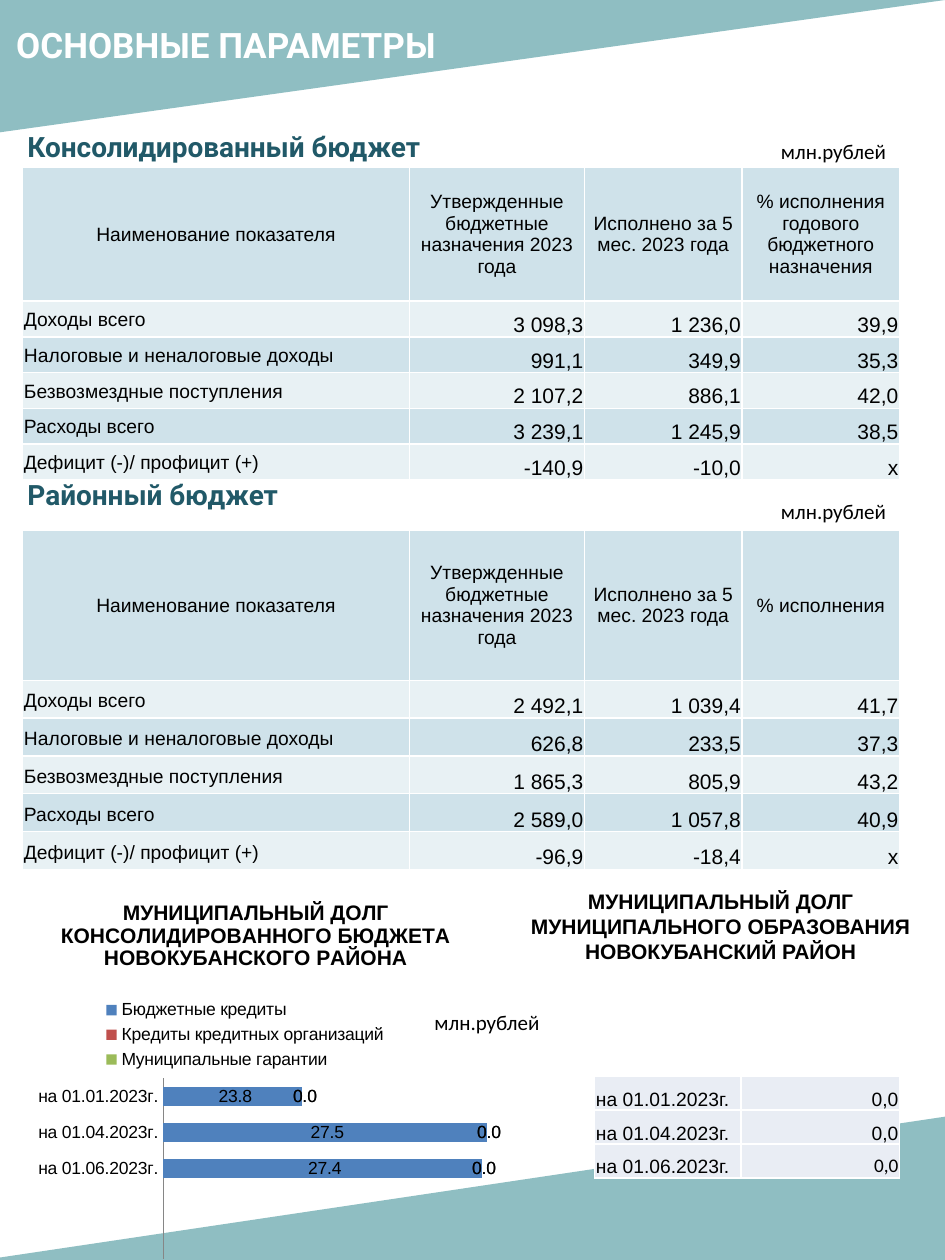
import pptx
import pptx.chart.data
import pptx.dml.color
import pptx.enum.chart
import pptx.enum.shapes
import pptx.enum.text
import pptx.oxml
import pptx.oxml.ns
import pptx.util
from lxml import etree

Inches, Pt = pptx.util.Inches, pptx.util.Pt
RGB = pptx.dml.color.RGBColor
ALIGN, ANCHOR = pptx.enum.text.PP_ALIGN, pptx.enum.text.MSO_ANCHOR
qn = pptx.oxml.ns.qn

TEAL, DARK = RGB(0x51, 0x9A, 0xA0), RGB(0x21, 0x59, 0x68)
WHITE, BLACK, GRAY = RGB(255, 255, 255), RGB(0, 0, 0), RGB(0x86, 0x86, 0x86)
BAND, PALE, ICE = RGB(0xCF, 0xE2, 0xEA), RGB(0xE8, 0xF1, 0xF4), RGB(0xE9, 0xED, 0xF4)
BLUE, RED, GREEN = RGB(0x4F, 0x81, 0xBD), RGB(0xC0, 0x50, 0x4D), RGB(0x9B, 0xBB, 0x59)

# left, top, width, height, flip
WEDGES = [(0, 0, 7.5, 1.05, "flipH"), (-0.13, 8.86, 7.65, 1.14, "flipV")]
# text, left, top, width, height, size, font, colour
HEADS = [
    ("ОСНОВНЫЕ ПАРАМЕТРЫ", 0.03, 0.14, 4.87, 0.43, 20, "Roboto", WHITE),
    ("Консолидированный бюджет", 0.12, 0.98, 4.87, 0.36, 16, "Roboto", DARK),
    ("Районный бюджет", 0.12, 3.74, 4.87, 0.36, 16, "Roboto", DARK),
]
UNIT = "млн.рублей"
UNITS = [(6.1, 1.05), (6.1, 3.91), (3.35, 7.96)]
COLS = ["Наименование показателя", "Утвержденные бюджетные назначения 2023 года",
        "Исполнено за 5 мес. 2023 года"]
NAMES = ["Доходы всего", "Налоговые и неналоговые доходы", "Безвозмездные поступления",
         "Расходы всего", "Дефицит (-)/ профицит (+)"]
WIDTHS = [3.07, 1.39, 1.25, 1.25]
# top, header height, row height, last heading, values
BUDGETS = [
    (1.33, 1.06, 0.28, "% исполнения годового бюджетного назначения", [
        ("3 098,3", "1 236,0", "39,9"), ("991,1", "349,9", "35,3"),
        ("2 107,2", "886,1", "42,0"), ("3 239,1", "1 245,9", "38,5"),
        ("-140,9", "-10,0", " х")]),
    (4.21, 1.19, 0.3, "% исполнения", [
        ("2 492,1", "1 039,4", "41,7"), ("626,8", "233,5", "37,3"),
        ("1 865,3", "805,9", "43,2"), ("2 589,0", "1 057,8", "40,9"),
        ("-96,9", "-18,4", " х")]),
]
DATES = ["на 01.01.2023г.", "на 01.04.2023г.", "на 01.06.2023г."]
DEBT = "МУНИЦИПАЛЬНЫЙ ДОЛГ МУНИЦИПАЛЬНОГО ОБРАЗОВАНИЯ НОВОКУБАНСКИЙ РАЙОН"
TITLE = "МУНИЦИПАЛЬНЫЙ ДОЛГ КОНСОЛИДИРОВАННОГО БЮДЖЕТА НОВОКУБАНСКОГО РАЙОНА"
SERIES = [
    ("Бюджетные кредиты", [23.8, 27.5, 27.4], BLUE),
    ("Кредиты кредитных организаций", [0, 0, 0], RED),
    ("Муниципальные гарантии", [0, 0, 0], GREEN),
]
SPARE = 2  # empty slots below the dates
FORMAT = r"#\ ##0.0"


def style(font, size, name="Arial", color=BLACK, bold=False):
    font.size, font.name, font.bold = Pt(size), name, bold
    font.color.rgb = color


def label(slide, text, box, size, name, color=BLACK, bold=False, align=ALIGN.LEFT):
    frame = slide.shapes.add_textbox(*map(Inches, box)).text_frame
    frame.word_wrap = True
    frame.auto_size = pptx.enum.text.MSO_AUTO_SIZE.SHAPE_TO_FIT_TEXT
    par = frame.paragraphs[0]
    par.text, par.alignment = text, align
    style(par.font, size, name, color, bold)


def wedge(slide, box, flip):
    shape = slide.shapes.add_shape(
        pptx.enum.shapes.MSO_SHAPE.RIGHT_TRIANGLE, *map(Inches, box))
    shape.shadow.inherit = False
    shape.rotation = 180
    shape._element.spPr.find(qn("a:xfrm")).set(flip, "1")
    shape.line.fill.background()
    shape.fill.solid()
    shape.fill.fore_color.rgb = TEAL
    tint = shape._element.spPr.find(qn("a:solidFill"))[0]
    etree.SubElement(tint, qn("a:alpha")).set("val", "64000")


def put(cell, text, fill, size, align, anchor=ANCHOR.BOTTOM, pad=(0.01, 0), name="Arial"):
    """Fill one cell and draw its white borders; pad is top and bottom."""
    cell.margin_left = cell.margin_right = Inches(0.01)
    cell.margin_top, cell.margin_bottom = map(Inches, pad)
    cell.vertical_anchor = anchor
    par = cell.text_frame.paragraphs[0]
    par.text, par.alignment = text, align
    style(par.font, size, name)
    props = cell._tc.get_or_add_tcPr()
    for side in ("lnL", "lnR", "lnT", "lnB"):
        line = etree.SubElement(props, qn("a:" + side), w=str(Pt(1)))
        paint = etree.SubElement(line, qn("a:solidFill"))
        etree.SubElement(paint, qn("a:srgbClr"), val=str(WHITE))
    cell.fill.solid()
    cell.fill.fore_color.rgb = fill


def grid(slide, left, top, widths, heights):
    table = slide.shapes.add_table(
        len(heights), len(widths), Inches(left), Inches(top),
        Inches(sum(widths)), Inches(sum(heights))).table
    for col, width in zip(table.columns, widths):
        col.width = Inches(width)
    for row, height in zip(table.rows, heights):
        row.height = Inches(height)
    return table


def budget(slide, top, head, step, last, values):
    table = grid(slide, 0.18, top, WIDTHS, [head] + [step] * len(NAMES))
    wide = (0.05, 0.05)
    for c, text in enumerate(COLS + [last]):
        put(table.cell(0, c), text, BAND, 11, ALIGN.CENTER, ANCHOR.MIDDLE, wide)
    for r, (name, nums) in enumerate(zip(NAMES, values), 1):
        fill = PALE if r % 2 else BAND
        put(table.cell(r, 0), name, fill, 11, ALIGN.LEFT, pad=wide)
        for c, num in enumerate(nums, 1):
            put(table.cell(r, c), num, fill, 12, ALIGN.RIGHT)


def place(node, x, y, w, h, inner=False):
    """Give a plot area or legend a fixed layout, as fractions of the chart."""
    for old in node.findall(qn("c:layout")):
        node.remove(old)
    layout = etree.Element(qn("c:layout"))
    manual = etree.SubElement(layout, qn("c:manualLayout"))
    parts = [("layoutTarget", "inner")] if inner else []
    parts += [("xMode", "edge"), ("yMode", "edge"), ("x", x), ("y", y), ("w", w), ("h", h)]
    for tag, val in parts:
        etree.SubElement(manual, qn("c:" + tag), val=str(val))
    node.insert(0 if inner else 1, layout)


def bars(slide):
    data = pptx.chart.data.CategoryChartData(number_format=FORMAT)
    data.categories = DATES + [""] * SPARE
    for name, vals, _ in SERIES:
        data.add_series(name, vals + [None] * SPARE)
    chart = slide.shapes.add_chart(
        pptx.enum.chart.XL_CHART_TYPE.BAR_STACKED,
        *map(Inches, (-0.13, 7, 4.32, 3)), data).chart
    style(chart.font, 10)
    chart.has_title = True
    par = chart.chart_title.text_frame.paragraphs[0]
    par.text = TITLE
    style(par.font, 12, bold=True)
    chart.has_legend = True
    chart.legend.position = pptx.enum.chart.XL_LEGEND_POSITION.TOP
    chart.legend.include_in_layout = False
    place(chart.legend._element, 0.2, 0.3, 0.56, 0.21)
    place(chart._chartSpace.chart.plotArea, 0.33, 0.52, 0.64, 0.48, inner=True)

    plot = chart.plots[0]
    plot.gap_width, plot.overlap, plot.vary_by_categories = 95, 100, False
    for ser, (_, _, color) in zip(plot.series, SERIES):
        ser.format.fill.solid()
        ser.format.fill.fore_color.rgb = color
        tags = ser.data_labels
        tags.show_value = True
        tags.number_format, tags.number_format_is_linked = FORMAT, False

    cat, val = chart.category_axis, chart.value_axis
    cat.reverse_order = True
    cat.major_tick_mark = pptx.enum.chart.XL_TICK_MARK.NONE
    cat.format.line.color.rgb = GRAY
    val.visible = val.has_major_gridlines = False
    val.minimum_scale, val.maximum_scale = 21, 28


def main():
    deck = pptx.Presentation()
    deck.slide_width, deck.slide_height = Inches(7.5), Inches(10)
    slide = deck.slides.add_slide(deck.slide_layouts[6])
    for *box, flip in WEDGES:
        wedge(slide, box, flip)
    for text, *box, size, name, color in HEADS:
        label(slide, text, box, size, name, color, bold=True)
    for left, top in UNITS:
        label(slide, UNIT, (left, top, 1.1, 0.3), 12, "Calibri")
    for item in BUDGETS:
        budget(slide, *item)
    label(slide, DEBT, (3.86, 7, 3.72, 0.91), 12, "Arial", bold=True, align=ALIGN.CENTER)
    table = grid(slide, 4.72, 8.54, [1.16, 1.26], [0.27] * len(DATES))
    for r, date in enumerate(DATES):
        font = "Calibri" if date == DATES[-1] else "Arial"
        put(table.cell(r, 0), date, ICE, 11, ALIGN.LEFT)
        put(table.cell(r, 1), "0,0", ICE, 11, ALIGN.RIGHT, name=font)
    bars(slide)
    deck.save("out.pptx")


if __name__ == "__main__":
    main()
